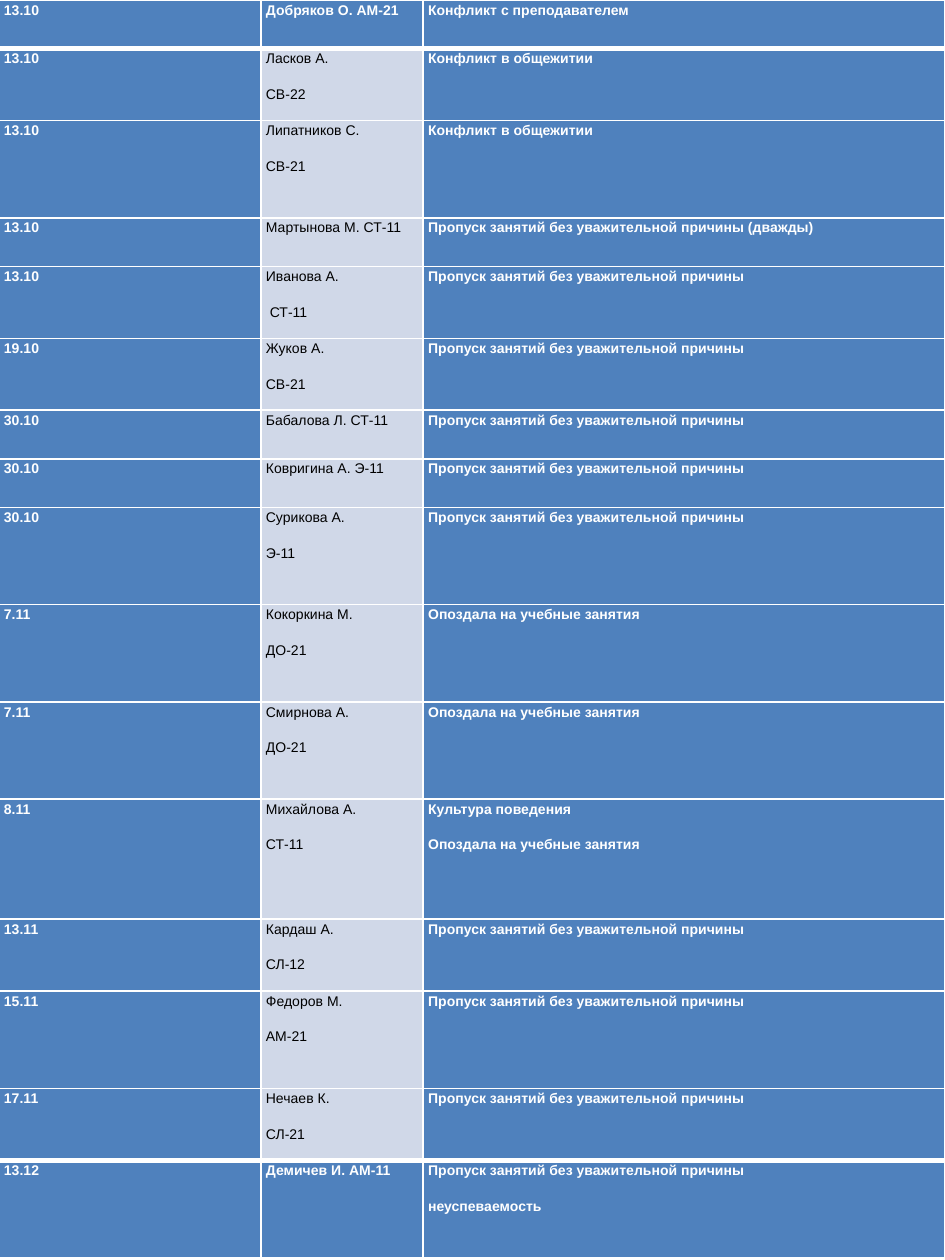
from lxml import etree
from pptx import Presentation
from pptx import util as u
from pptx.dml.color import RGBColor
from pptx.enum import text
from pptx.oxml.ns import qn

# Content: date, student lines, reason lines, row height class
SKIP = "Пропуск занятий без уважительной причины"
LATE = "Опоздала на учебные занятия"
DORM = "Конфликт в общежитии"
ROWS = [
    ("13.10", ["Добряков О. АМ-21"], ["Конфликт с преподавателем"], "S"),
    ("13.10", ["Ласков А.", "СВ-22"], [DORM], "M"),
    ("13.10", ["Липатников С.", "СВ-21"], [DORM], "L"),
    ("13.10", ["Мартынова М. СТ-11"], [SKIP + " (дважды)"], "S"),
    ("13.10", ["Иванова А.", " СТ-11"], [SKIP], "M"),
    ("19.10", ["Жуков А.", "СВ-21"], [SKIP], "M"),
    ("30.10", ["Бабалова Л. СТ-11"], [SKIP], "S"),
    ("30.10", ["Ковригина А. Э-11"], [SKIP], "S"),
    ("30.10", ["Сурикова А.", "Э-11"], [SKIP], "L"),
    ("7.11", ["Кокоркина М.", "ДО-21"], [LATE], "L"),
    ("7.11", ["Смирнова А.", "ДО-21"], [LATE], "L"),
    ("8.11", ["Михайлова А.", "СТ-11"], ["Культура поведения", LATE], "XL"),
    ("13.11", ["Кардаш А.", "СЛ-12"], [SKIP], "M"),
    ("15.11", ["Федоров М.", "АМ-21"], [SKIP], "L"),
    ("17.11", ["Нечаев К.", "СЛ-21"], [SKIP], "M"),
    ("13.12", ["Демичев И. АМ-11"], [SKIP, "неуспеваемость"], "L"),
]
HIGH = {"S": 0.98, "M": 1.45, "L": 1.96, "XL": 2.42}
WIDE = [5.28, 3.27, 10.52]
COLORS = {"head": "4F81BD", "name": "D0D8E8", "light": "FFFFFF", "dark": "000000"}
LAST = len(ROWS) - 1


def color(key):
    return RGBColor.from_string(COLORS[key])


def border(cell, side, width):
    props = cell._tc.get_or_add_tcPr()
    line = etree.SubElement(props, qn("a:ln" + side), w=str(u.Pt(width)))
    fill = etree.SubElement(line, qn("a:solidFill"))
    etree.SubElement(fill, qn("a:srgbClr"), val=COLORS["light"])


def write(cell, lines, ink, bold):
    frame = cell.text_frame
    for i, line in enumerate(lines):
        para = frame.add_paragraph() if i else frame.paragraphs[0]
        para.alignment = text.PP_ALIGN.JUSTIFY
        para.line_spacing = 1.15
        para.space_after = u.Pt(10)
        run = para.add_run()
        run.text = line
        run.font.name = "Arial"
        run.font.size = u.Pt(8)
        run.font.bold = bold
        run.font.color.rgb = color(ink)


def main():
    deck = Presentation()
    deck.slide_width, deck.slide_height = u.Cm(19.05), u.Cm(25.4)
    slide = deck.slides.add_slide(deck.slide_layouts[6])

    # Table grid
    tall = sum(HIGH[row[3]] for row in ROWS)
    frame = slide.shapes.add_table(len(ROWS), len(WIDE), u.Cm(-0.02), 0,
                                   u.Cm(sum(WIDE)), u.Cm(tall))
    table = frame.table
    table.first_row = table.horz_banding = False
    for col, width in zip(table.columns, WIDE):
        col.width = u.Cm(width)

    # Cells: thick rules set off the first and last rows
    for r, (date, names, why, size) in enumerate(ROWS):
        table.rows[r].height = u.Cm(HIGH[size])
        top = 3 if r in (1, LAST) else 1
        base = 3 if r in (0, LAST - 1) else 1
        for c, lines in enumerate(([date], names, why)):
            cell = table.cell(r, c)
            cell.margin_left = cell.margin_right = u.Cm(0.1)
            cell.margin_top = cell.margin_bottom = 0
            for side, width in zip("LRTB", (1, 1, top, base)):
                border(cell, side, width)
            plain = c == 1 and 0 < r < LAST
            cell.fill.solid()
            cell.fill.fore_color.rgb = color("name" if plain else "head")
            write(cell, lines, "dark" if plain else "light", not plain)

    deck.save("out.pptx")


if __name__ == "__main__":
    main()
